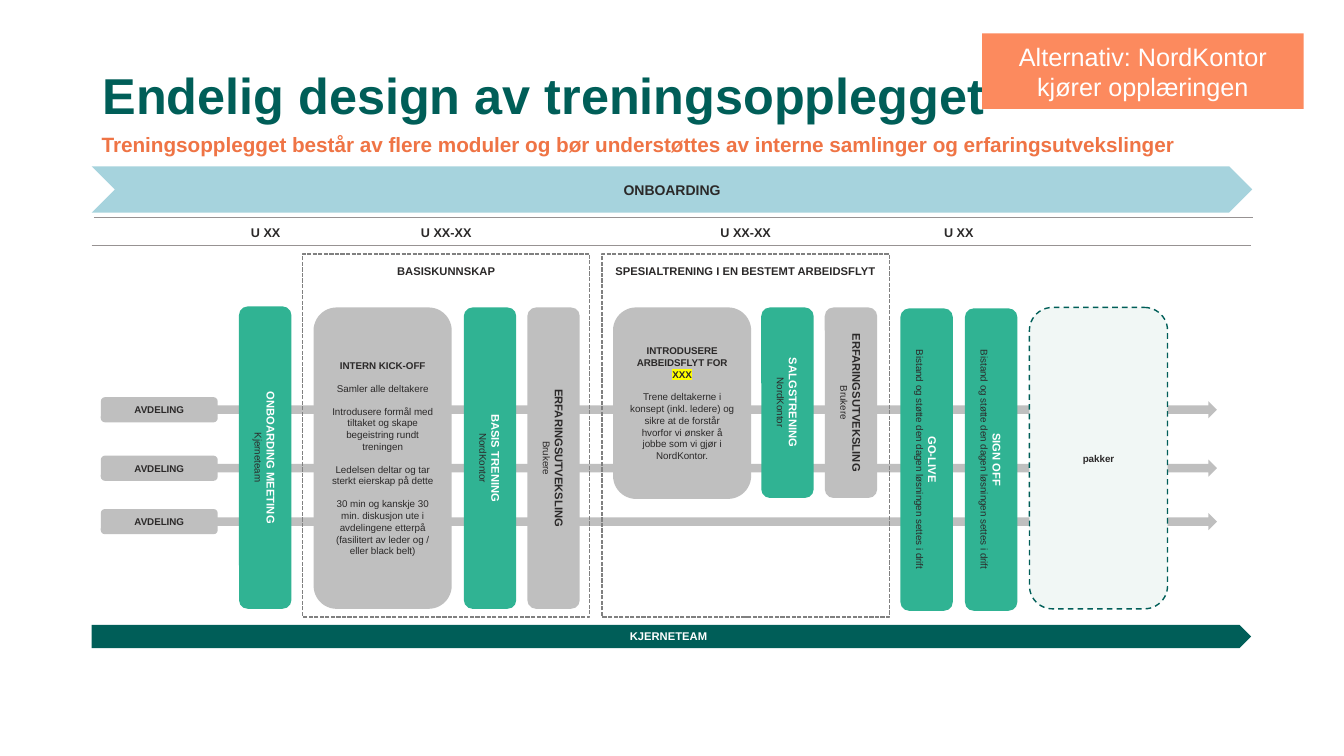
from lxml import etree
from pptx import Presentation
from pptx.dml.color import RGBColor
from pptx.enum.dml import MSO_LINE
from pptx.enum.shapes import MSO_CONNECTOR, MSO_SHAPE
from pptx.enum.text import MSO_ANCHOR, PP_ALIGN
from pptx.oxml.ns import qn
from pptx.util import Emu, Pt

PX = 9144
FONT = "Arial"
RECT, ROUND = MSO_SHAPE.RECTANGLE, MSO_SHAPE.ROUNDED_RECTANGLE
ARROW, CHEVRON, PENTAGON = MSO_SHAPE.RIGHT_ARROW, MSO_SHAPE.CHEVRON, MSO_SHAPE.PENTAGON
STRAIGHT = MSO_CONNECTOR.STRAIGHT
DASH, SYS_DASH = MSO_LINE.DASH, MSO_LINE.SQUARE_DOT
LEFT, CENTER = PP_ALIGN.LEFT, PP_ALIGN.CENTER
TOP, MIDDLE = MSO_ANCHOR.TOP, MSO_ANCHOR.MIDDLE

INK, WHITE, GRAY, RULE, FRAME = "2B2929", "FFFFFF", "BFBFBF", "979292", "808080"
GREEN, TEAL, PALE, BLUE = "30B393", "005E58", "F1F7F5", "A6D3DD"
ORANGE, CORAL, YELLOW = "EF7445", "FC8A5E", "FFFF00"

LANES = [394, 452, 505]
FRAMES = [(300, "BASISKUNNSKAP"), (597, "SPESIALTRENING I EN BESTEMT ARBEIDSFLYT")]
WEEKS = [(237, 53, "U XX"), (300, 285, "U XX-XX"), (597, 285, "U XX-XX"), (893, 116, "U XX")]
SUPPORT = "Bistand og støtte den dagen løsningen settes i drift"
BARS = [
    (237, 304, 300, GREEN, "ONBOARDING MEETING", "Kjerneteam"),
    (460, 305, 299, GREEN, "BASIS TRENING", "NordKontor"),
    (523, 305, 299, GRAY, "ERFARINGSUTVEKSLING", "Brukere"),
    (755, 305, 189, GREEN, "SALGSTRENING", "NordKontor"),
    (818, 305, 189, GRAY, "ERFARINGSUTVEKSLING", "Brukere"),
    (893, 306, 300, GREEN, "GO-LIVE", SUPPORT),
    (957, 306, 300, GREEN, "SIGN OFF", SUPPORT),
]
KICKOFF = [
    "Samler alle deltakere",
    "Introdusere formål med tiltaket og skape begeistring rundt treningen",
    "Ledelsen deltar og tar sterkt eierskap på dette",
    "30 min og kanskje 30 min. diskusjon ute i avdelingene etterpå",
]
KICKOFF_NOTE = "(fasilitert av leder og / eller black belt)"
WORKFLOW = ("Trene deltakerne i konsept (inkl. ledere) og sikre at de forstår "
            "hvorfor vi ønsker å jobbe som vi gjør i NordKontor.")


def px(*values):
    """Turn px lengths into EMU."""
    return [Emu(int(v * PX)) for v in values]


def rgb(value):
    """Turn a hex string into a colour."""
    return RGBColor.from_string(value)


def add_par(tf, text, size, color=INK, bold=True, align=CENTER, before=0):
    """Write a paragraph, reusing the empty first one."""
    p = tf.paragraphs[0]
    if p.runs:
        p = tf.add_paragraph()
    p.add_run().text = text
    p.alignment = align
    if before:
        p.space_before = Pt(before)
    p.font.name, p.font.size, p.font.bold = FONT, Pt(size), bold
    p.font.color.rgb = rgb(color)
    return p


def add_box(s, kind, x, y, w, h, fill=None, line=None, dash=None):
    """Draw a preset shape and return it."""
    sp = s.shapes.add_shape(kind, *px(x, y, w, h))
    sp.shadow.inherit = False
    if fill:
        sp.fill.solid()
        sp.fill.fore_color.rgb = rgb(fill)
    else:
        sp.fill.background()
    if line:
        sp.line.color.rgb = rgb(line)
        sp.line.width = Pt(1)
        sp.line.dash_style = dash
    else:
        sp.line.fill.background()
    sp.text_frame.word_wrap = True
    sp.text_frame.vertical_anchor = MIDDLE
    return sp


def add_turned(s, x, y, w, h, fill, line=None, dash=None):
    """Draw a rounded box turned 90 degrees that covers x, y, w, h."""
    sp = add_box(s, ROUND, x + (w - h) / 2, y + (h - w) / 2, h, w, fill, line, dash)
    sp.rotation = 90
    return sp


def add_bar(s, x, y, h, fill, title, who):
    """Draw a narrow module bar with text running down."""
    tf = add_turned(s, x, y, 52, h, fill).text_frame
    tf.margin_left, tf.margin_right, tf.margin_top, tf.margin_bottom = px(12, 12, 12, 12)
    add_par(tf, title, 8, WHITE if fill == GREEN else INK)
    add_par(tf, who, 7, bold=False)


def add_card(s, x, h, title, fill=GRAY, line=None, dash=None):
    """Draw a wide module card with upright text and return its frame."""
    tf = add_turned(s, x, 305, 137, h, fill, line, dash).text_frame
    tf._txBody.bodyPr.set("vert", "vert270")
    add_par(tf, title, 7)
    return tf


def add_label(s, x, y, w, h, text, size, color=INK, align=CENTER, anchor=TOP):
    """Write a bold text box and return its paragraph."""
    tf = s.shapes.add_textbox(*px(x, y, w, h)).text_frame
    tf.word_wrap = True
    tf.vertical_anchor = anchor
    return add_par(tf, text, size, color, align=align)


def add_rule(s, x, y, w):
    """Draw a thin horizontal line."""
    ln = s.shapes.add_connector(STRAIGHT, *px(x, y, x + w, y))
    ln.line.color.rgb = rgb(RULE)
    ln.line.width = Pt(0.5)
    etree.SubElement(ln._element.spPr, qn("a:effectLst"))


def add_marked(p, text):
    """Add a highlighted run to a paragraph."""
    r = p.add_run()
    r.text = text
    mark = etree.SubElement(r._r.get_or_add_rPr(), qn("a:highlight"))
    etree.SubElement(mark, qn("a:srgbClr")).set("val", YELLOW)


def add_lane(s, y):
    """Draw a department tag with its arrow."""
    add_box(s, ARROW, 196, y + 4, 1011, 17, GRAY)
    add_par(add_box(s, ROUND, 100, y, 116, 25, GRAY).text_frame, "AVDELING", 7)


def main():
    """Build the slide and save it."""
    prs = Presentation()
    prs.slide_width, prs.slide_height = px(1333, 750)
    s = prs.slides.add_slide(prs.slide_layouts[6])

    for y in LANES:
        add_lane(s, y)
    for x, title in FRAMES:
        add_box(s, RECT, x, 252, 285, 360, line=FRAME, dash=SYS_DASH)
        add_label(s, x, 257, 285, 24, title, 8)
    for x, w, week in WEEKS:
        add_label(s, x, 218, w, 25, week, 9)
    add_rule(s, 93, 216, 1150)
    add_rule(s, 91, 243, 1150)

    onboarding = add_box(s, CHEVRON, 91, 165, 1151, 46, BLUE)
    add_par(onboarding.text_frame, "ONBOARDING", 10)
    team = add_box(s, PENTAGON, 91, 620, 1150, 23, TEAL)
    add_par(team.text_frame, "KJERNETEAM", 8, WHITE)

    for bar in BARS:
        add_bar(s, *bar)
    kickoff = add_card(s, 311, 299, "INTERN KICK-OFF")
    for text in KICKOFF:
        add_par(kickoff, text, 7, bold=False, before=8)
    add_par(kickoff, KICKOFF_NOTE, 7, bold=False)
    workflow = add_card(s, 608, 190, "INTRODUSERE ARBEIDSFLYT FOR ")
    add_marked(workflow.paragraphs[0], "XXX")
    add_par(workflow, WORKFLOW, 7, bold=False, before=8)
    add_card(s, 1021, 299, "pakker", PALE, TEAL, DASH)

    title = add_label(s, 92, 66, 1150, 93, "Endelig design av treningsopplegget", 36, TEAL, LEFT)
    subtitle = add_label(
        s, 91, 127, 1150, 35,
        "Treningsopplegget består av flere moduler og bør understøttes av "
        "interne samlinger og erfaringsutvekslinger", 14.8, ORANGE, LEFT, MIDDLE)
    title.line_spacing = subtitle.line_spacing = 0.9
    note = add_box(s, RECT, 974, 33, 319, 75, CORAL)
    add_par(note.text_frame, "Alternativ: NordKontor kjører opplæringen", 18, WHITE, False)
    prs.save("out.pptx")


if __name__ == "__main__":
    main()
